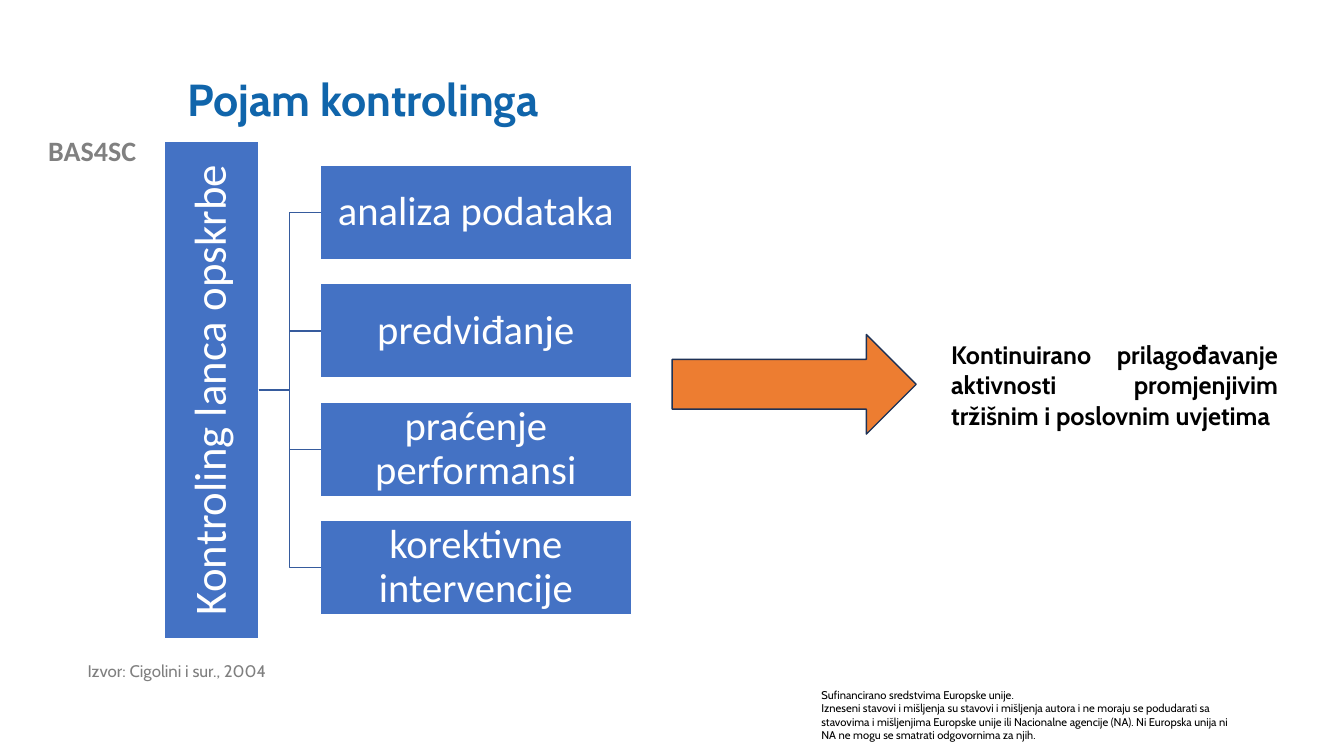
from lxml.etree import SubElement
from pptx import Presentation
from pptx.dml.color import RGBColor
from pptx.enum.shapes import MSO_CONNECTOR, MSO_SHAPE
from pptx.enum.text import MSO_ANCHOR, PP_ALIGN
from pptx.oxml.ns import qn
from pptx.util import Cm, Pt

COLORS = {
    "title": "1065AB", "project": "808080", "source": "7F7F7F",
    "text": "000000", "white": "FFFFFF", "box": "4472C4",
    "branch": "365B9D", "arrow": "ED7D31", "arrow_edge": "1E3256",
}

# Places are left, top, width, height in centimetres.
TEXTS = [
    dict(lines=["BAS4SC"], place=(0, 3.25, 4.65, 1.12), size=20, color="project",
         font="Calibri", bold=True, align=PP_ALIGN.CENTER),
    dict(lines=["Sufinancirano sredstvima Europske unije.",
                "Izneseni stavovi i mišljenja su stavovi i mišljenja autora i ne moraju "
                "se podudarati sa stavovima i mišljenjima Europske unije ili Nacionalne "
                "agencije (NA). Ni Europska unija ni NA ne mogu se smatrati "
                "odgovornima za njih."],
         place=(20.45, 17.22, 11.1, 1.63), size=8, color="text"),
    dict(lines=["Pojam kontrolinga"], place=(4.47, 1.02, 27.08, 3.1), size=32,
         color="title", bold=True, spacing=0.9, anchor=MSO_ANCHOR.MIDDLE),
    dict(lines=["Izvor: Cigolini i sur., 2004"], place=(1.96, 16.59, 12.73, 1.32),
         size=12, color="source", spacing=0.9),
    dict(lines=["Kontinuirano prilagođavanje aktivnosti promjenjivim tržišnim i "
                "poslovnim uvjetima"],
         place=(23.72, 8.43, 8.74, 3.33), size=18, color="text", bold=True,
         align=PP_ALIGN.JUSTIFY),
]
ROOT = "Kontroling lanca opskrbe"
ACTIVITIES = ["analiza podataka", "predviđanje", "praćenje performansi",
              "korektivne intervencije"]
ARROW_PLACE = (16.94, 8.43, 6.15, 2.51)

CENTER_Y = 9.83
ROOT_LEFT, ROOT_WIDTH, ROOT_HEIGHT = 4.14, 2.38, 12.55
BOX_LEFT, BOX_WIDTH, BOX_HEIGHT, BOX_PITCH = 8.08, 7.83, 2.38, 2.98


def rgb(name):
    return RGBColor.from_string(COLORS[name])


def write(frame, lines, size, color, font="Cabin", bold=False,
          align=PP_ALIGN.LEFT, spacing=1.0, anchor=MSO_ANCHOR.TOP):
    frame.word_wrap = True
    frame.vertical_anchor = anchor
    for number, line in enumerate(lines):
        paragraph = frame.add_paragraph() if number else frame.paragraphs[0]
        paragraph.text = line
        paragraph.alignment = align
        paragraph.line_spacing = spacing
        paragraph.font.name = font
        paragraph.font.size = Pt(size)
        paragraph.font.bold = bold
        paragraph.font.color.rgb = rgb(color)


def add_filled(slide, kind, place, fill, edge):
    shape = slide.shapes.add_shape(kind, *map(Cm, place))
    shape.shadow.inherit = False
    shape.fill.solid()
    shape.fill.fore_color.rgb = rgb(fill)
    shape.line.color.rgb = rgb(edge)
    shape.line.width = Pt(1)
    return shape


def add_box(slide, label, place, size):
    box = add_filled(slide, MSO_SHAPE.RECTANGLE, place, "box", "white")
    frame = box.text_frame
    frame.margin_left = frame.margin_right = Cm(0.05)
    frame.margin_top = frame.margin_bottom = Cm(0.05)
    write(frame, [label], size, "white", font="Calibri", align=PP_ALIGN.CENTER,
          spacing=0.9, anchor=MSO_ANCHOR.MIDDLE)
    return box


def add_branch(slide, parent, child):
    """Join the parent's right side to the child's left side with an elbow."""
    branch = slide.shapes.add_connector(MSO_CONNECTOR.ELBOW, 0, 0, 0, 0)
    branch.begin_connect(parent, 3)
    branch.end_connect(child, 1)
    branch.line.color.rgb = rgb("branch")
    branch.line.width = Pt(1)
    SubElement(branch._element.spPr, qn("a:effectLst"))


def add_tree(slide):
    root_top = CENTER_Y - ROOT_HEIGHT / 2
    root = add_box(slide, ROOT, (ROOT_LEFT, root_top, ROOT_WIDTH, ROOT_HEIGHT), 32)
    root.text_frame._txBody.bodyPr.set("vert", "vert270")
    first_top = CENTER_Y - (len(ACTIVITIES) - 1) * BOX_PITCH / 2 - BOX_HEIGHT / 2
    for row, activity in enumerate(ACTIVITIES):
        top = first_top + row * BOX_PITCH
        box = add_box(slide, activity, (BOX_LEFT, top, BOX_WIDTH, BOX_HEIGHT), 29)
        add_branch(slide, root, box)


def main():
    presentation = Presentation()
    presentation.slide_width, presentation.slide_height = Cm(33.87), Cm(19.05)
    slide = presentation.slides.add_slide(presentation.slide_layouts[6])
    for text in TEXTS:
        style = {key: value for key, value in text.items() if key != "place"}
        box = slide.shapes.add_textbox(*map(Cm, text["place"]))
        write(box.text_frame, **style)
    add_tree(slide)
    add_filled(slide, MSO_SHAPE.RIGHT_ARROW, ARROW_PLACE, "arrow", "arrow_edge")
    presentation.save("out.pptx")


if __name__ == "__main__":
    main()
